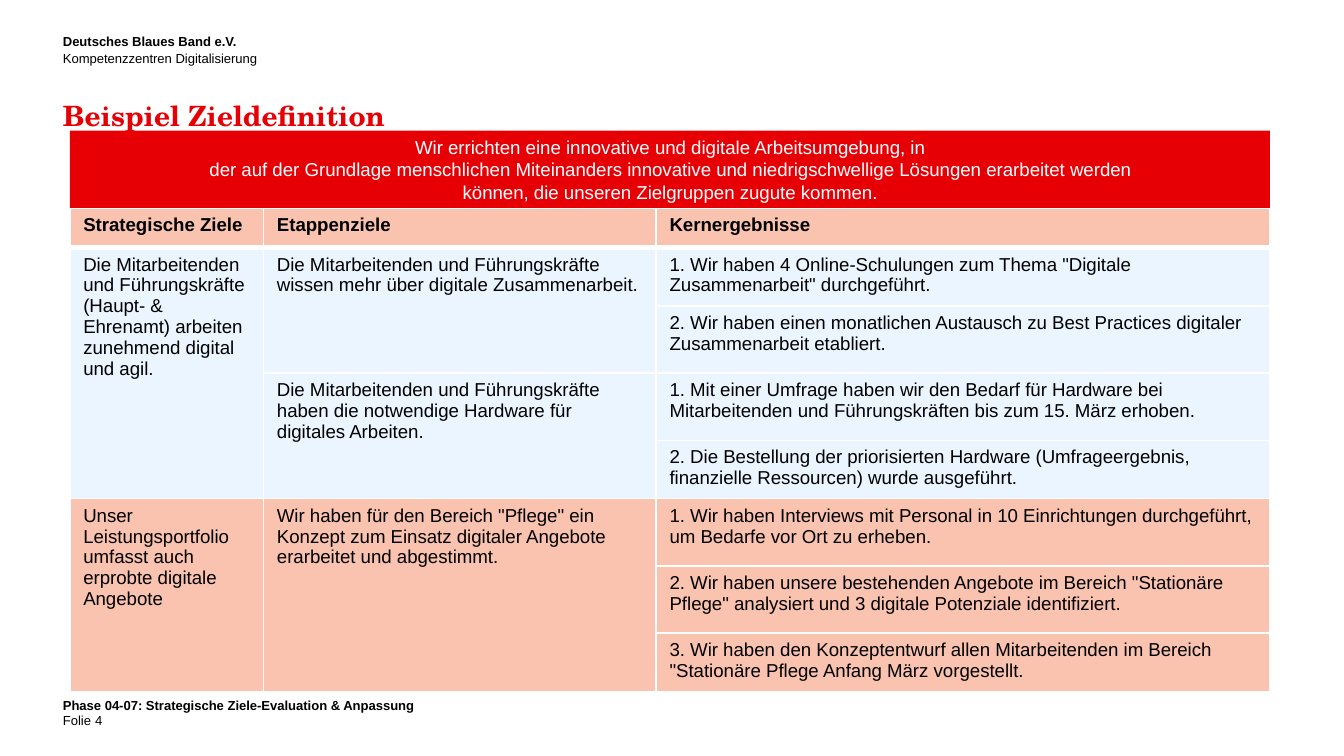
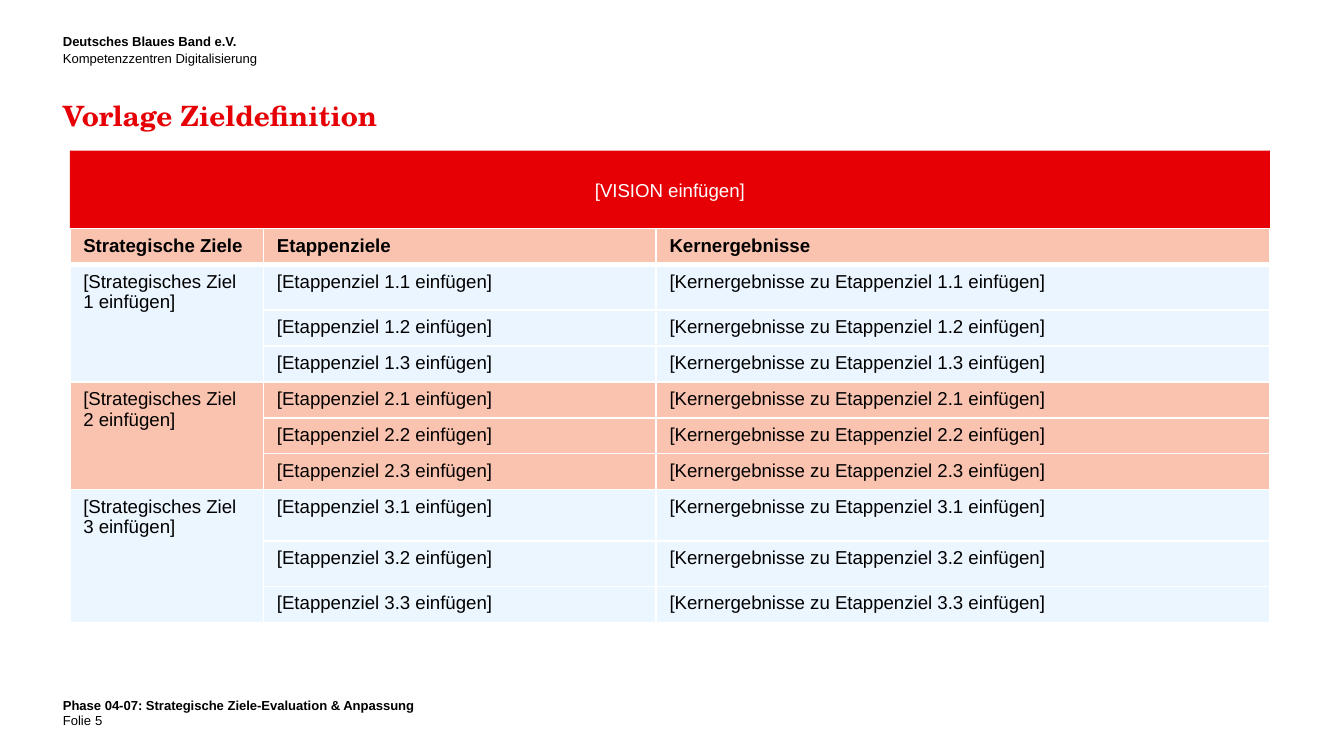
from dataclasses import dataclass

from lxml import etree
from pptx import Presentation
from pptx.dml.color import RGBColor
from pptx.enum.shapes import MSO_SHAPE
from pptx.enum.text import MSO_ANCHOR, PP_ALIGN
from pptx.oxml.ns import qn
from pptx.util import Cm, Pt

RECT = MSO_SHAPE.RECTANGLE
TOP, MIDDLE, BOTTOM = MSO_ANCHOR.TOP, MSO_ANCHOR.MIDDLE, MSO_ANCHOR.BOTTOM
CENTER = PP_ALIGN.CENTER


@dataclass(frozen=True)
class Theme:
    """Colours, fonts and type sizes shared by the slides."""
    red: str = "E60005"
    rose: str = "FAC3AF"
    sky: str = "EBF5FF"
    ice: str = "ECF6FF"
    white: str = "FFFFFF"
    black: str = "000000"
    sans: str = "Arial"
    serif: str = "TeX Gyre Schola"
    small: int = 7
    body: int = 10
    title: int = 15


THEME = Theme()
LEFT, WIDE = 1.19, 23.01
GRID, SPAN = 1.32, 22.68
BAND = 1.47
COLS = (3.66, 7.42, 11.6)
HEADS = ("Strategische Ziele", "Etappenziele", "Kernergebnisse")
ORG = ("Deutsches Blaues Band e.V.", "Kompetenzzentren Digitalisierung")
PHASE = "Phase 04-07: Strategische Ziele-Evaluation & Anpassung"
VISION = (
    "Wir errichten eine innovative und digitale Arbeitsumgebung, in\n"
    "der auf der Grundlage menschlichen Miteinanders innovative und "
    "niedrigschwellige Lösungen erarbeitet werden",
    "können, die unseren Zielgruppen zugute kommen.",
)
SAMPLE = (
    ("Die Mitarbeitenden und Führungskräfte (Haupt- & Ehrenamt) arbeiten "
     "zunehmend digital und agil.", THEME.sky, (
         ("Die Mitarbeitenden und Führungskräfte wissen mehr über digitale "
          "Zusammenarbeit.", (
              '1. Wir haben 4 Online-Schulungen zum Thema "Digitale '
              'Zusammenarbeit" durchgeführt.',
              "2. Wir haben einen monatlichen Austausch zu Best Practices "
              "digitaler Zusammenarbeit etabliert.")),
         ("Die Mitarbeitenden und Führungskräfte haben die notwendige "
          "Hardware für digitales Arbeiten.", (
              "1. Mit einer Umfrage haben wir den Bedarf für Hardware bei "
              "Mitarbeitenden und Führungskräften bis zum 15. März erhoben.",
              "2. Die Bestellung der priorisierten Hardware (Umfrageergebnis, "
              "finanzielle Ressourcen) wurde ausgeführt.")))),
    ("Unser Leistungsportfolio umfasst auch erprobte digitale Angebote",
     THEME.rose, (
         ('Wir haben für den Bereich "Pflege" ein Konzept zum Einsatz '
          "digitaler Angebote erarbeitet und abgestimmt.", (
              "1. Wir haben Interviews mit Personal in 10 Einrichtungen "
              "durchgeführt, um Bedarfe vor Ort zu erheben.",
              '2. Wir haben unsere bestehenden Angebote im Bereich "Stationäre '
              'Pflege" analysiert und 3 digitale Potenziale identifiziert.',
              "3. Wir haben den Konzeptentwurf allen Mitarbeitenden im Bereich "
              '"Stationäre Pflege Anfang März vorgestellt.')),)),
)
BLANKS = tuple(
    (f"[Strategisches Ziel {goal} einfügen]", color, tuple(
        (f"[Etappenziel {goal}.{step} einfügen]",
         (f"[Kernergebnisse zu Etappenziel {goal}.{step} einfügen]",))
        for step in (1, 2, 3)))
    for goal, color in enumerate((THEME.sky, THEME.rose, THEME.ice), 1))


def style(part, size, color=THEME.black, bold=False, name=THEME.sans):
    """Format the font of a paragraph."""
    form = {"size": Pt(size), "bold": bold, "name": name}
    for key, value in form.items():
        setattr(part.font, key, value)
    part.font.color.rgb = RGBColor.from_string(color)


def write(frame, lines, size, pitch=None, align=None, bolds=(), **look):
    """Fill a text frame with one paragraph per line."""
    frame.word_wrap = True
    for i, line in enumerate(lines):
        part = frame.add_paragraph() if i else frame.paragraphs[0]
        part.text = line
        part.alignment = align
        if pitch:
            part.line_spacing = Pt(pitch)
        style(part, size, bold=i in bolds, **look)


def label(slide, box, lines, size, pitch, anchor=TOP, **look):
    """Add a text box without insets."""
    frame = slide.shapes.add_textbox(*map(Cm, box)).text_frame
    for side in ("left", "top", "right", "bottom"):
        setattr(frame, f"margin_{side}", 0)
    frame.vertical_anchor = anchor
    write(frame, lines, size, pitch, **look)


def banner(slide, top, lines):
    """Add the red vision band."""
    shape = slide.shapes.add_shape(RECT, *map(Cm, (GRID, top, SPAN, BAND)))
    shape.shadow.inherit = False
    shape.fill.solid()
    shape.fill.fore_color.rgb = RGBColor.from_string(THEME.red)
    shape.line.fill.background()
    shape.text_frame.vertical_anchor = MIDDLE
    write(shape.text_frame, lines, THEME.body, 12, CENTER, color=THEME.white)


def edge(cell, widths):
    """Draw white borders on the left, right, top and bottom of a cell."""
    props = cell._tc.get_or_add_tcPr()
    for i, (side, width) in enumerate(zip("LRTB", widths)):
        line = etree.Element(qn(f"a:ln{side}"), w=str(Pt(width)))
        fill = etree.SubElement(line, qn("a:solidFill"))
        etree.SubElement(fill, qn("a:srgbClr"), val=THEME.white)
        props.insert(i, line)


def paint(cell, color, widths):
    """Fill a cell and draw its borders."""
    cell.fill.solid()
    cell.fill.fore_color.rgb = RGBColor.from_string(color)
    edge(cell, widths)


def put(table, row, col, text, count=1, bold=False):
    """Write a cell that spans a number of rows."""
    cell = table.cell(row, col)
    if count > 1:
        cell.merge(table.cell(row + count - 1, col))
    write(cell.text_frame, [text], THEME.body, bolds=(0,) if bold else ())


def matrix(slide, top, goals, rows):
    """Add the table of goals, steps and results."""
    box = map(Cm, (GRID, top, SPAN, sum(rows)))
    table = slide.shapes.add_table(len(rows), len(COLS), *box).table
    table.horz_banding = False
    for col, width in zip(table.columns, COLS):
        col.width = Cm(width)
    for row, height in zip(table.rows, rows):
        row.height = Cm(height)
    for col, head in enumerate(HEADS):
        put(table, 0, col, head, bold=True)
    colors = [THEME.rose]
    for goal, color, steps in goals:
        first = len(colors)
        for step, results in steps:
            put(table, len(colors), 1, step, len(results))
            for result in results:
                put(table, len(colors), 2, result)
                colors.append(color)
        put(table, first, 0, goal, len(colors) - first)
    for i, color in enumerate(colors):
        widths = (1, 1, 3 if i == 1 else 1, 3 if i == 0 else 1)
        for col in range(len(COLS)):
            paint(table.cell(i, col), color, widths)


def page(deck, number, title, top, vision, goals, rows):
    """Add one slide with header, title, band, table and footer."""
    slide = deck.slides.add_slide(deck.slide_layouts[6])
    small = THEME.small
    label(slide, (LEFT, 0.61, 4.55, 0.64), ORG, small, 9, bolds=(0,))
    label(slide, (LEFT, 13.16, WIDE, 0.23), [PHASE], small, 9, bolds=(0,))
    label(slide, (LEFT, 13.44, 0.76, 0.33), ["Folie"], small, 9, BOTTOM)
    label(slide, (1.8, 13.46, 5.72, 0.3), [str(number)], small, 9, BOTTOM)
    label(slide, (LEFT, 1.96, WIDE, 0.94), [title], THEME.title, 15,
          bolds=(0,), color=THEME.red, name=THEME.serif)
    banner(slide, top, vision)
    matrix(slide, top + BAND, goals, rows)


def main():
    """Build and save the deck."""
    deck = Presentation()
    deck.slide_width, deck.slide_height = Cm(25.4), Cm(14.29)
    page(deck, 4, "Beispiel Zieldefinition", 2.47, VISION, SAMPLE,
         (0.74, 1.04, 1.27, 1.27, 1.09, 1.27, 1.27, 1.04))
    page(deck, 5, "Vorlage Zieldefinition", 2.85, ["[VISION einfügen]"],
         BLANKS, (0.65, 0.86, *[0.65] * 5, 0.97, 0.86, 0.65))
    deck.save("out.pptx")


if __name__ == "__main__":
    main()
